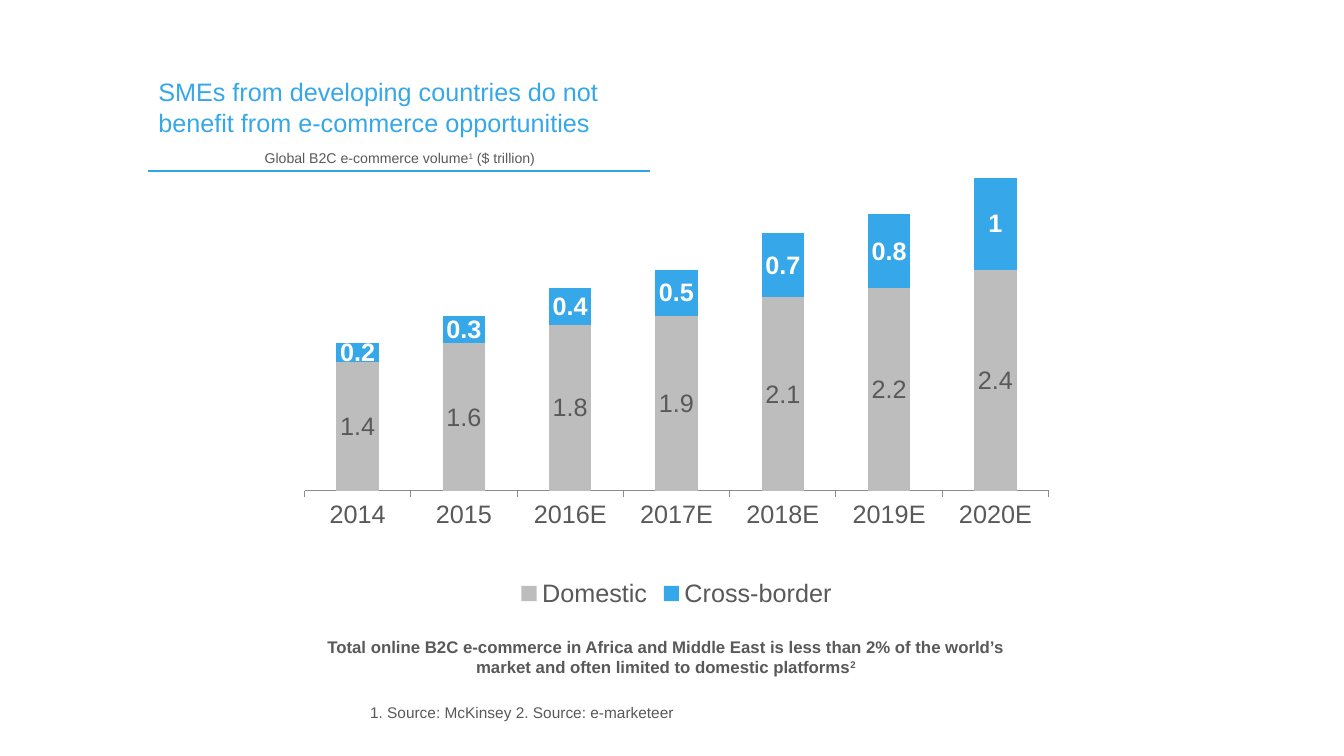
from lxml import etree
from pptx import Presentation
from pptx import util as u
from pptx.chart.data import CategoryChartData
from pptx.dml.color import RGBColor
from pptx.enum import chart as ch, shapes, text
from pptx.oxml import parse_xml
from pptx.oxml.ns import nsdecls, qn

BLUE = RGBColor(0x36, 0xA7, 0xE9)
RULE = RGBColor(0x30, 0xA4, 0xE8)
GREY = RGBColor(0x59, 0x59, 0x59)
SILVER = RGBColor(0xBD, 0xBD, 0xBD)
AXIS = RGBColor(0x8C, 0x8C, 0x8C)
WHITE = RGBColor(0xFF, 0xFF, 0xFF)

YEARS = ["2014", "2015", "2016E", "2017E", "2018E", "2019E", "2020E"]
SERIES = [
    ("Domestic", [1.4, 1.6, 1.8, 1.9, 2.1, 2.2, 2.4], SILVER, GREY, False),
    ("Cross-border", [0.2, 0.3, 0.4, 0.5, 0.7, 0.8, 1], BLUE, WHITE, True),
]
PLOT = {"x": 0.017, "y": 0.003, "w": 0.966, "h": 0.749}


def style_font(font, size, color=GREY, bold=False):
    font.name = "Arial"
    font.size = u.Pt(size)
    font.bold = bold
    font.color.rgb = color


def write(p, content, size, color=GREY, bold=False, align=None, raised=False):
    r = p.add_run()
    r.text = content
    style_font(r.font, size, color, bold)
    if raised:
        r._r.get_or_add_rPr().set("baseline", "30000")
    if align is not None:
        p.alignment = align


class Slide:
    def __init__(self, prs):
        self.s = prs.slides.add_slide(prs.slide_layouts[5])
        self.s.background.fill.solid()
        self.s.background.fill.fore_color.rgb = WHITE

    def title(self, content, x, y, w, h):
        sp = self.s.shapes.title
        sp.left, sp.top, sp.width, sp.height = map(u.Inches, (x, y, w, h))
        tf = sp.text_frame
        tf.word_wrap = True
        tf.auto_size = text.MSO_AUTO_SIZE.NONE
        tf.vertical_anchor = text.MSO_ANCHOR.TOP
        write(tf.paragraphs[0], content, 18, BLUE, align=text.PP_ALIGN.LEFT)

    def label(self, runs, x, y, w, h, size, bold=False,
              align=text.PP_ALIGN.CENTER):
        sp = self.s.shapes.add_textbox(*map(u.Inches, (x, y, w, h)))
        tf = sp.text_frame
        tf.word_wrap = True
        tf.auto_size = text.MSO_AUTO_SIZE.SHAPE_TO_FIT_TEXT
        tf.margin_left = tf.margin_right = tf.margin_top = tf.margin_bottom = 0
        for content, raised in runs:
            write(tf.paragraphs[0], content, size, bold=bold, align=align,
                  raised=raised)

    def rule(self, x1, x2, y):
        line = self.s.shapes.add_connector(
            shapes.MSO_CONNECTOR.STRAIGHT, *map(u.Inches, (x1, y, x2, y)))
        line.line.color.rgb = RULE
        line.line.width = u.Pt(1.5)
        etree.SubElement(line._element.spPr, qn("a:effectLst"))

    def stacked_chart(self, x, y, w, h):
        data = CategoryChartData()
        data.categories = YEARS
        for name, values, *_ in SERIES:
            data.add_series(name, values)
        chart = self.s.shapes.add_chart(
            ch.XL_CHART_TYPE.COLUMN_STACKED,
            *map(u.Inches, (x, y, w, h)), data).chart
        style_font(chart.font, 18)
        chart.has_title = False
        chart.has_legend = True
        chart.legend.position = ch.XL_LEGEND_POSITION.BOTTOM
        chart.legend.include_in_layout = False
        self.axes(chart)
        plot = chart.plots[0]
        plot.gap_width, plot.overlap = 150, 100
        plot.vary_by_categories = False
        for series, (_, _, fill, color, bold) in zip(plot.series, SERIES):
            series.format.fill.solid()
            series.format.fill.fore_color.rgb = fill
            labels = series.data_labels
            labels.show_value = True
            labels.position = ch.XL_LABEL_POSITION.CENTER
            style_font(labels.font, 18, color, bold)
        self.place_plot(chart)

    def axes(self, chart):
        years, volume = chart.category_axis, chart.value_axis
        years.major_tick_mark = ch.XL_TICK_MARK.OUTSIDE
        years.format.line.color.rgb = AXIS
        years.format.line.width = u.Pt(0.75)
        volume.minimum_scale, volume.maximum_scale = 0, 4
        volume.has_major_gridlines = False
        volume.visible = False

    def place_plot(self, chart):
        area = chart._chartSpace.chart.plotArea
        for old in area.findall(qn("c:layout")):
            area.remove(old)
        sizes = "".join(f'<c:{k} val="{v}"/>' for k, v in PLOT.items())
        area.insert(0, parse_xml(
            f'<c:layout {nsdecls("c")}><c:manualLayout>'
            '<c:layoutTarget val="inner"/><c:xMode val="edge"/>'
            f'<c:yMode val="edge"/>{sizes}</c:manualLayout></c:layout>'))


def main():
    prs = Presentation()
    prs.slide_width, prs.slide_height = u.Inches(13.33), u.Inches(7.5)
    s = Slide(prs)
    s.title("SMEs from developing countries do not benefit from "
            "e-commerce opportunities", 1.47, 0.71, 4.91, 0.34)
    s.stacked_chart(2.89, 1.2, 7.64, 4.88)
    s.rule(1.47, 6.45, 1.7)
    s.label([("Global B2C e-commerce volume", False), ("1", True),
             (" ($ trillion)", False)], 1.47, 1.48, 4.99, 0.17, 10.1)
    s.label([("Total online B2C e-commerce in Africa and Middle East is less "
              "than 2% of the world’s market and often limited to domestic "
              "platforms", False), ("2", True)],
            3.2, 6.32, 6.81, 0.4, 12, bold=True)
    s.label([("1. Source: McKinsey 2. Source: e-marketeer", False)],
            3.67, 6.98, 4.65, 0.19, 11, align=text.PP_ALIGN.LEFT)
    prs.save("out.pptx")


if __name__ == "__main__":
    main()
